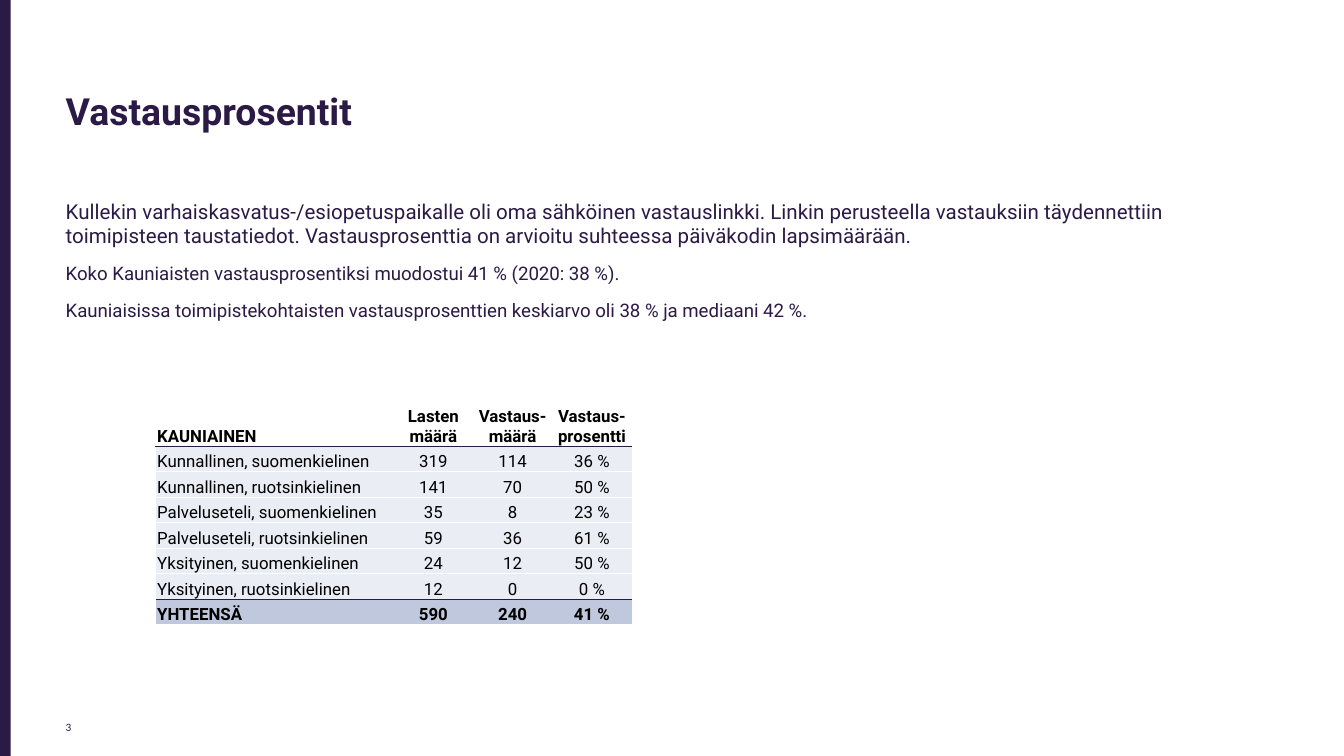
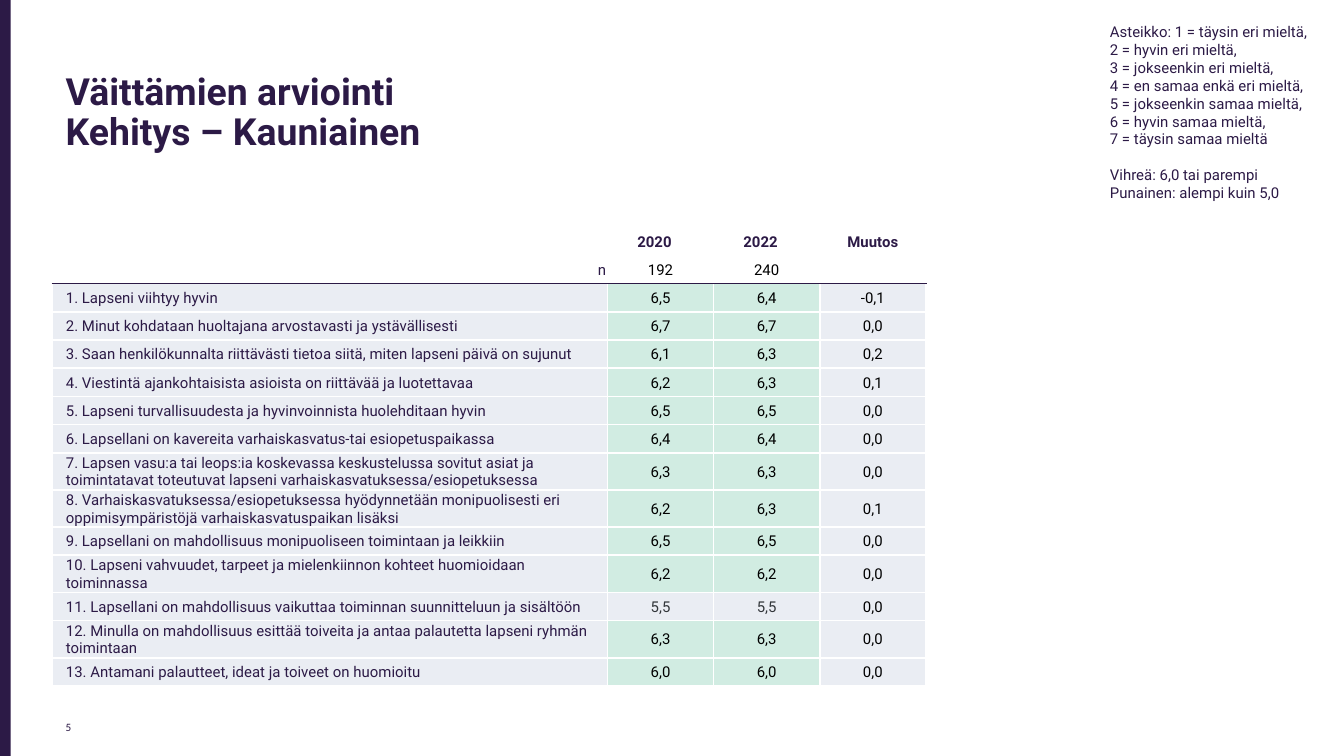
from lxml import etree
from pptx import Presentation
from pptx.dml.color import RGBColor
from pptx.enum.shapes import MSO_SHAPE
from pptx.enum.text import MSO_ANCHOR, PP_ALIGN
from pptx.oxml.ns import qn
from pptx.util import Inches, Pt

RECT = MSO_SHAPE.RECTANGLE
TOP, MIDDLE, BOTTOM = MSO_ANCHOR.TOP, MSO_ANCHOR.MIDDLE, MSO_ANCHOR.BOTTOM
LEFT, CENTER, RIGHT = PP_ALIGN.LEFT, PP_ALIGN.CENTER, PP_ALIGN.RIGHT
C = {"purple": "2C1A46", "white": "FFFFFF", "black": "000000", "gray": "32363A",
     "row": "EAEDF3", "total": "BFC8DC", "good": "D1ECE2"}
FONT = "Roboto"
WHITE = ("white", 1)
THIN = ("white", 0.5)
RULE = ("purple", 0.5)


def add_text(s, box, lines, anchor=TOP, font=FONT, bold=False, spacing=None):
    tf = s.shapes.add_textbox(*[Inches(v) for v in box]).text_frame
    tf.word_wrap = True
    tf.vertical_anchor = anchor
    for i, (text, size, before) in enumerate(lines):
        p = tf.add_paragraph() if i else tf.paragraphs[0]
        p.text = text
        p.space_before = Pt(before)
        p.line_spacing = spacing
        p.font.size = Pt(size)
        p.font.name = font
        p.font.bold = bold
        p.font.color.rgb = RGBColor.from_string(C["purple"])


def fill_cell(cell, text, size, align, anchor, fill, edges, color="black",
              bold=False, left=0.01, right=0.01):
    cell.margin_left, cell.margin_right = Inches(left), Inches(right)
    cell.margin_top, cell.margin_bottom = Inches(0.01), 0
    cell.vertical_anchor = anchor
    p = cell.text_frame.paragraphs[0]
    if text:
        p.text = text
    else:
        etree.SubElement(p._p, qn("a:endParaRPr"), sz=str(size * 100))
    p.alignment = align
    p.font.size = Pt(size)
    p.font.name = FONT
    p.font.bold = bold
    p.font.color.rgb = RGBColor.from_string(C[color])
    tcPr = cell._tc.get_or_add_tcPr()
    for side, edge in zip("LRTB", edges):
        ln = etree.SubElement(tcPr, qn("a:ln" + side))
        if edge:
            ln.set("w", str(Pt(edge[1])))
            solid = etree.SubElement(ln, qn("a:solidFill"))
            etree.SubElement(solid, qn("a:srgbClr"), val=C[edge[0]])
        else:
            etree.SubElement(ln, qn("a:noFill"))
    if fill:
        cell.fill.solid()
        cell.fill.fore_color.rgb = RGBColor.from_string(C[fill])
    else:
        cell.fill.background()


prs = Presentation()
prs.slide_width, prs.slide_height = Inches(10), Inches(5.625)

slides = []
for title, number in [("Vastausprosentit", "3"),
                      ("Väittämien arviointi\vKehitys – Kauniainen", "5")]:
    s = prs.slides.add_slide(prs.slide_layouts[6])
    band = s.shapes.add_shape(RECT, 0, 0, Inches(0.08), prs.slide_height)
    band.shadow.inherit = False
    band.fill.solid()
    band.fill.fore_color.rgb = RGBColor.from_string(C["purple"])
    band.line.fill.background()
    add_text(s, (0.39, 0.3, 8.62, 1.09), [(title, 20, 0)], MIDDLE, bold=True, spacing=0.9)
    add_text(s, (0.39, 5.21, 0.41, 0.3), [(number, 6, 0)], BOTTOM, "Calibri")
    slides.append(s)
response_slide, statement_slide = slides

add_text(response_slide, (0.39, 1.43, 8.62, 1.2), [
    ("Kullekin varhaiskasvatus-/esiopetuspaikalle oli oma sähköinen vastauslinkki. "
     "Linkin perusteella vastauksiin täydennettiin toimipisteen taustatiedot. "
     "Vastausprosenttia on arvioitu suhteessa päiväkodin lapsimäärään.", 11, 0),
    ("Koko Kauniaisten vastausprosentiksi muodostui 41 % (2020: 38 %).", 10, 7.5),
    ("Kauniaisissa toimipistekohtaisten vastausprosenttien keskiarvo oli 38 % "
     "ja mediaani 42 %.", 10, 7.5),
])

responses = [
    ("KAUNIAINEN", "Lasten määrä", "Vastaus-määrä", "Vastaus-prosentti"),
    ("Kunnallinen, suomenkielinen", "319", "114", "36 %"),
    ("Kunnallinen, ruotsinkielinen", "141", "70", "50 %"),
    ("Palveluseteli, suomenkielinen", "35", "8", "23 %"),
    ("Palveluseteli, ruotsinkielinen", "59", "36", "61 %"),
    ("Yksityinen, suomenkielinen", "24", "12", "50 %"),
    ("Yksityinen, ruotsinkielinen", "12", "0", "0 %"),
    ("YHTEENSÄ", "590", "240", "41 %"),
]
last = len(responses) - 1
tbl = response_slide.shapes.add_table(len(responses), 4, Inches(1.16), Inches(2.93),
                                      Inches(3.54), Inches(1.72)).table
tbl.first_row = tbl.horz_banding = False
for j, width in enumerate([1.77, 0.59, 0.59, 0.59]):
    tbl.columns[j].width = Inches(width)
for i, row in enumerate(responses):
    tbl.rows[i].height = Inches(0.19 if i else 0.39)
    fill = {0: None, last: "total"}.get(i, "row")
    side = None if i else WHITE
    above = RULE if i in (1, last) else THIN
    below = RULE if i in (0, last - 1) else THIN
    for j, text in enumerate(row):
        fill_cell(tbl.cell(i, j), text, 9, CENTER if j else LEFT, BOTTOM, fill,
                  (side, side, above, below), bold=i in (0, last))

statements = [
    ("", "2020", "2022", "Muutos"),
    ("n", "192", "240", ""),
    ("1. Lapseni viihtyy hyvin", "6,5", "6,4", "-0,1"),
    ("2. Minut kohdataan huoltajana arvostavasti ja ystävällisesti", "6,7", "6,7", "0,0"),
    ("3. Saan henkilökunnalta riittävästi tietoa siitä, miten lapseni päivä on sujunut",
     "6,1", "6,3", "0,2"),
    ("4. Viestintä ajankohtaisista asioista on riittävää ja luotettavaa", "6,2", "6,3", "0,1"),
    ("5. Lapseni turvallisuudesta ja hyvinvoinnista huolehditaan hyvin", "6,5", "6,5", "0,0"),
    ("6. Lapsellani on kavereita varhaiskasvatus-tai esiopetuspaikassa", "6,4", "6,4", "0,0"),
    ("7. Lapsen vasu:a tai leops:ia koskevassa keskustelussa sovitut asiat ja toimintatavat "
     "toteutuvat lapseni varhaiskasvatuksessa/esiopetuksessa", "6,3", "6,3", "0,0"),
    ("8. Varhaiskasvatuksessa/esiopetuksessa hyödynnetään monipuolisesti eri "
     "oppimisympäristöjä varhaiskasvatuspaikan lisäksi", "6,2", "6,3", "0,1"),
    ("9. Lapsellani on mahdollisuus monipuoliseen toimintaan ja leikkiin", "6,5", "6,5", "0,0"),
    ("10. Lapseni vahvuudet, tarpeet ja mielenkiinnon kohteet huomioidaan toiminnassa",
     "6,2", "6,2", "0,0"),
    ("11. Lapsellani on mahdollisuus vaikuttaa toiminnan suunnitteluun ja sisältöön",
     "5,5", "5,5", "0,0"),
    ("12. Minulla on mahdollisuus esittää toiveita ja antaa palautetta lapseni ryhmän "
     "toimintaan", "6,3", "6,3", "0,0"),
    ("13. Antamani palautteet, ideat ja toiveet on huomioitu", "6,0", "6,0", "0,0"),
]
tbl = statement_slide.shapes.add_table(len(statements), 4, Inches(0.39), Inches(1.69),
                                       Inches(6.5), Inches(3.15)).table
tbl.first_row = tbl.horz_banding = False
for j, width in enumerate([4.13, 0.79, 0.79, 0.79]):
    tbl.columns[j].width = Inches(width)
for i, row in enumerate(statements):
    tbl.rows[i].height = Inches(0.21)
    above = RULE if i == 2 else WHITE
    below = RULE if i == 1 else WHITE
    for j, text in enumerate(row):
        score = i > 1 and j in (1, 2)
        good = score and float(text.replace(",", ".")) >= 6
        fill = "good" if good else "row" if i > 1 else None
        color = "purple" if i == 0 or j == 0 else "gray" if score and not good else "black"
        align = CENTER if j else RIGHT if i == 1 else LEFT
        fill_cell(tbl.cell(i, j), text, 8, align, MIDDLE, fill, (WHITE, WHITE, above, below),
                  color, bold=i == 0, left=0.01 if j else 0.1,
                  right=0.1 if i == 0 and j in (1, 2) else 0.01)

scale = ["Asteikko: 1 = täysin eri mieltä,", "2 = hyvin eri mieltä,",
         "3 = jokseenkin eri mieltä,", "4 = en samaa enkä eri mieltä,",
         "5 = jokseenkin samaa mieltä,", "6 = hyvin samaa mieltä,",
         "7 = täysin samaa mieltä"]
add_text(statement_slide, (8.16, 0.12, 1.71, 1.58),
         [(line, 8, 0) for line in scale]
         + [("Vihreä: 6,0 tai parempi", 8, 9.4), ("Punainen: alempi kuin 5,0", 8, 0)])

prs.save("out.pptx")
